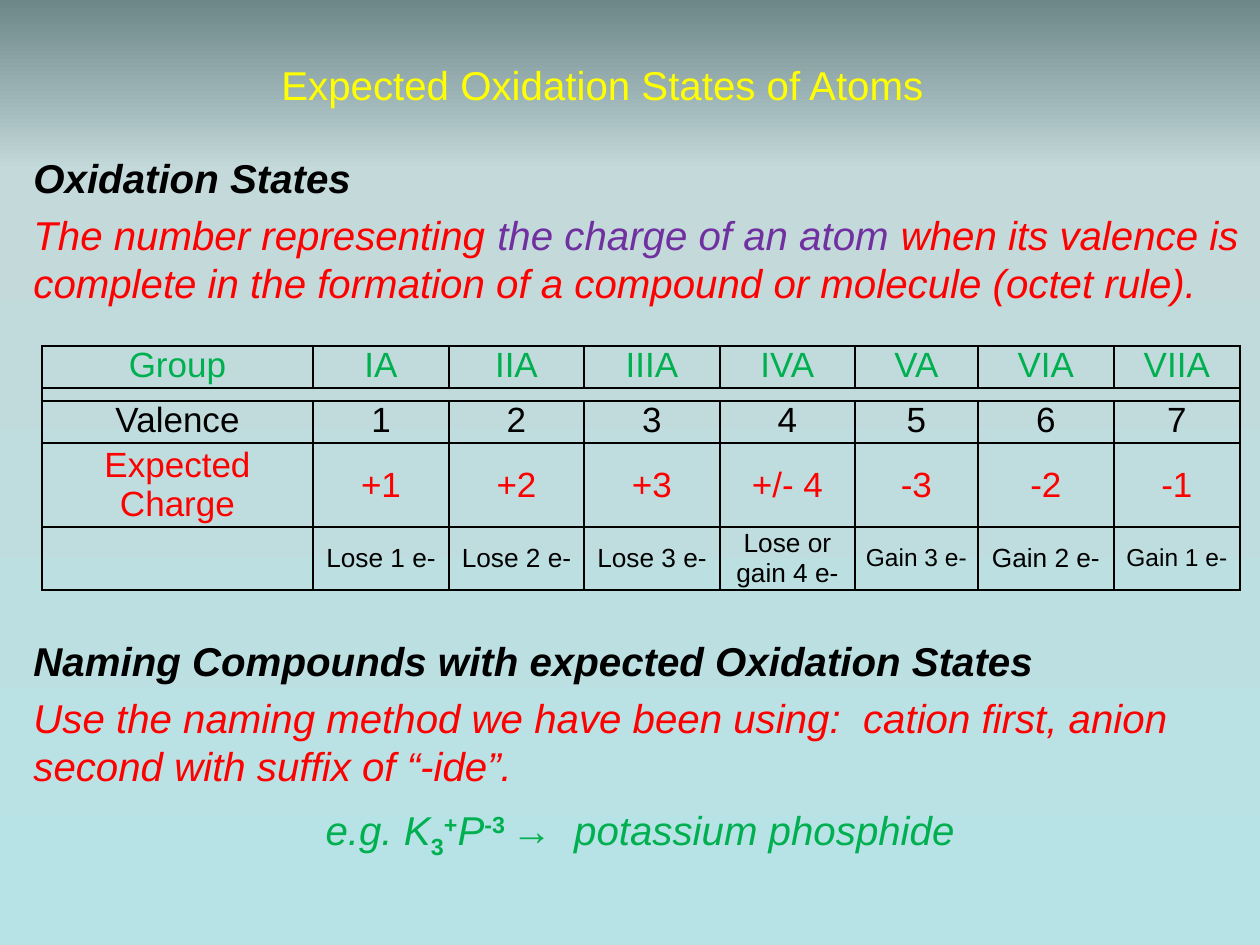
"""Build the slide on expected oxidation states of atoms."""
from copy import deepcopy
from dataclasses import dataclass, field

from pptx import Presentation
from pptx.dml.color import RGBColor as RGB
from pptx.enum.text import MSO_ANCHOR as ANCHOR, MSO_AUTO_SIZE as FIT, PP_ALIGN as ALIGN
from pptx.oxml.ns import qn
from pptx.util import Emu, Pt
from lxml.etree import SubElement

PX_PER_INCH = 126


@dataclass(frozen=True)
class Theme:
    font: str = "Arial"
    title: str = "FFFF00"
    ink: str = "000000"
    red: str = "FF0000"
    green: str = "00B050"
    purple: str = "7030A0"
    sky: tuple = ((0, "6D8688"), (0.18, "C3D9DA"), (1, "B8E3E6"))
    body: int = 23
    cell: int = 20
    note: int = 15
    small_note: int = 14
    spacer: int = 4


T = Theme()
HEADING = {"bold": True, "italic": True}
ITALIC = {"bold": False, "italic": True}
SCRIPT = {"bold": True, "italic": False}


@dataclass
class Span:
    text: str
    color: str
    fmt: dict = field(default_factory=dict)
    size: int = T.body
    baseline: int = 0


@dataclass
class Para:
    spans: list[Span]
    align: ALIGN = ALIGN.LEFT
    before: int = 0


@dataclass
class Block:
    box: tuple[int, int, int, int]
    paras: list[Para]
    anchor: ANCHOR = ANCHOR.TOP
    fit: FIT = FIT.SHAPE_TO_FIT_TEXT


@dataclass
class Row:
    height: int
    texts: list[str]
    color: str = T.ink
    sizes: tuple[int, ...] = (T.cell,) * 8
    anchor: ANCHOR = ANCHOR.MIDDLE


BLOCKS = [
    Block((220, 32, 766, 105),
          [Para([Span("Expected Oxidation States of Atoms", T.title)], ALIGN.CENTER)],
          ANCHOR.MIDDLE, FIT.NONE),
    Block((21, 147, 1239, 168), [
        Para([Span("Oxidation States", T.ink, HEADING)]),
        Para([Span("The number representing ", T.red, ITALIC),
              Span("the charge of an atom ", T.purple, ITALIC),
              Span("when its valence is complete in the formation of a compound "
                   "or molecule (octet rule).", T.red, ITALIC)], before=5)]),
    Block((21, 630, 1239, 233), [
        Para([Span("Naming Compounds with expected Oxidation States", T.ink, HEADING)]),
        Para([Span("Use the naming method we have been using:  cation first, anion "
                   "second with suffix of “-ide”.", T.red, ITALIC)], before=5),
        Para([Span("e.g. K", T.green, ITALIC),
              Span("3", T.green, SCRIPT, baseline=-25),
              Span("+", T.green, SCRIPT, baseline=30),
              Span("P", T.green, ITALIC),
              Span("-3 ", T.green, SCRIPT, baseline=30),
              Span("→  potassium phosphide", T.green, ITALIC)], ALIGN.CENTER, 9)]),
]

TABLE_AT = (42, 346)
COLS = (271, 136, 135, 136, 135, 123, 136, 126)
ROWS = [
    Row(42, ["Group", "IA", "IIA", "IIIA", "IVA", "VA", "VIA", "VIIA"], T.green,
        anchor=ANCHOR.TOP),
    Row(13, [""] * 8, sizes=(T.spacer,) * 8),
    Row(42, ["Valence", *"1234567"], anchor=ANCHOR.TOP),
    Row(84, ["Expected Charge", "+1", "+2", "+3", "+/- 4", "-3", "-2", "-1"], T.red),
    Row(63, ["", "Lose 1 e-", "Lose 2 e-", "Lose 3 e-", "Lose or gain 4 e-",
             "Gain 3 e-", "Gain 2 e-", "Gain 1 e-"],
        sizes=(T.note,) * 5 + (T.small_note, T.note, T.small_note)),
]


def px(n: int) -> Emu:
    return Emu(round(n * 914400 / PX_PER_INCH))


def apply(target, values: dict) -> None:
    for name, value in values.items():
        setattr(target, name, value)


def fill_para(p, para: Para) -> None:
    apply(p, {"alignment": para.align, "space_before": Pt(para.before)})
    for span in para.spans:
        if not span.text:
            SubElement(p._p, qn("a:endParaRPr"), sz=str(span.size * 100))
            continue
        r = p.add_run()
        r.text = span.text
        apply(r.font, {"name": T.font, "size": Pt(span.size), **span.fmt})
        r.font.color.rgb = RGB.from_string(span.color)
        if span.baseline:
            r._r.get_or_add_rPr().set("baseline", str(span.baseline * 1000))


def draw_block(s, block: Block) -> None:
    tf = s.shapes.add_textbox(*map(px, block.box)).text_frame
    apply(tf, {"word_wrap": True, "auto_size": block.fit, "vertical_anchor": block.anchor})
    for i, para in enumerate(block.paras):
        fill_para(tf.add_paragraph() if i else tf.paragraphs[0], para)


def draw_borders(cell) -> None:
    tc_pr = cell._tc.get_or_add_tcPr()
    for i, side in enumerate(("lnL", "lnR", "lnT", "lnB")):
        ln = tc_pr.makeelement(qn(f"a:{side}"), {"w": str(Pt(1))})
        SubElement(SubElement(ln, qn("a:solidFill")), qn("a:srgbClr"), val=T.ink)
        tc_pr.insert(i, ln)


def draw_table(s, rows: list[Row]) -> None:
    size = px(sum(COLS)), px(sum(row.height for row in rows))
    table = s.shapes.add_table(len(rows), len(COLS), *map(px, TABLE_AT), *size).table
    apply(table, {"first_row": False, "horz_banding": False})
    for col, width in zip(table.columns, COLS):
        col.width = px(width)
    for line, row in zip(table.rows, rows):
        line.height = px(row.height)
        for cell, text, pt in zip(line.cells, row.texts, row.sizes):
            apply(cell, {"margin_left": px(9), "margin_right": px(9), "margin_top": 0,
                         "margin_bottom": 0, "vertical_anchor": row.anchor})
            cell.fill.background()
            draw_borders(cell)
            fill_para(cell.text_frame.paragraphs[0],
                      Para([Span(text, row.color, size=pt)], ALIGN.CENTER))
    table.cell(1, 0).merge(table.cell(1, len(COLS) - 1))


def draw_background(s) -> None:
    fill = s.background.fill
    fill.gradient()
    fill.gradient_angle = 270
    stops = next(s._element.iter(qn("a:gsLst")))
    stops.append(deepcopy(stops[0]))
    for stop, (position, color) in zip(fill.gradient_stops, T.sky):
        stop.position = position
        stop.color.rgb = RGB.from_string(color)


def main() -> None:
    prs = Presentation()
    apply(prs, {"slide_width": px(1260), "slide_height": px(945)})
    s = prs.slides.add_slide(prs.slide_layouts[6])
    draw_background(s)
    draw_table(s, ROWS)
    for block in BLOCKS:
        draw_block(s, block)
    prs.save("out.pptx")


if __name__ == "__main__":
    main()
